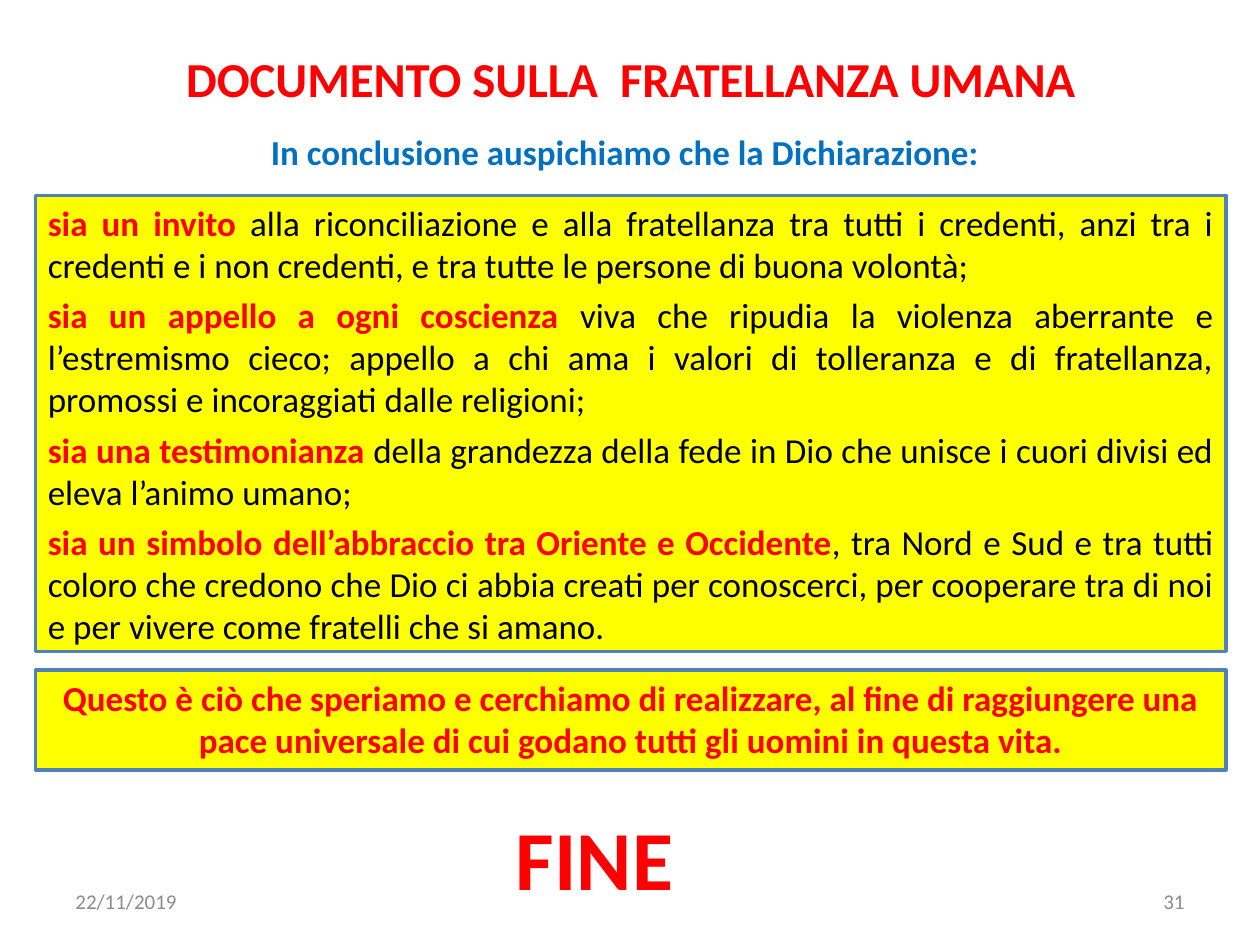
from dataclasses import dataclass
from typing import Optional

from pptx import Presentation
from pptx.dml.color import RGBColor
from pptx.enum.shapes import MSO_SHAPE as Shape
from pptx.enum.text import MSO_ANCHOR as Anchor, PP_ALIGN as Align
from pptx.slide import Slide
from pptx.util import Pt

FONT = "Calibri"
COLORS = {
    "red": "FF0000",
    "blue": "0070C0",
    "black": "000000",
    "grey": "8C8C8C",
    "yellow": "FFFF00",
    "border": "4F81BD",
}


@dataclass(frozen=True)
class Run:
    text: str
    color: str = "red"
    bold: bool = True


@dataclass(frozen=True)
class Block:
    left: float
    top: float
    width: float
    height: float
    size: float
    paragraphs: list[list[Run]]
    align: Align = Align.CENTER
    anchor: Anchor = Anchor.TOP
    fill: Optional[str] = None


WISHES = [
    ("sia un invito ",
     "alla riconciliazione e alla fratellanza tra tutti i credenti, anzi tra i credenti "
     "e i non credenti, e tra tutte le persone di buona volontà;"),
    ("sia un appello a ogni coscienza ",
     "viva che ripudia la violenza aberrante e l’estremismo cieco; appello a chi ama i "
     "valori di tolleranza e di fratellanza, promossi e incoraggiati dalle religioni;"),
    ("sia una testimonianza ",
     "della grandezza della fede in Dio che unisce i cuori divisi ed eleva l’animo umano;"),
    ("sia un simbolo dell’abbraccio tra Oriente e Occidente",
     ", tra Nord e Sud e tra tutti coloro che credono che Dio ci abbia creati per "
     "conoscerci, per cooperare tra di noi e per vivere come fratelli che si amano."),
]
HOPE = ("Questo è ciò che speriamo e cerchiamo di realizzare, al fine di raggiungere una "
        "pace universale di cui godano tutti gli uomini in questa vita.")

BLOCKS = [
    Block(20.2, 22, 680.4, 45, 27.9,
          [[Run("DOCUMENTO SULLA  FRATELLANZA UMANA")]], anchor=Anchor.MIDDLE),
    Block(20.2, 111.6, 680.4, 260.6, 20,
          [[Run(lead), Run(rest, "black", False)] for lead, rest in WISHES],
          align=Align.JUSTIFY, fill="yellow"),
    Block(36, 500.4, 168, 28.8, 12, [[Run("22/11/2019", "grey", False)]],
          align=Align.LEFT, anchor=Anchor.MIDDLE),
    Block(516, 500.4, 168, 28.8, 12, [[Run("31", "grey", False)]],
          align=Align.RIGHT, anchor=Anchor.MIDDLE),
    Block(76.3, 71.3, 561.6, 31.5, 20,
          [[Run("In conclusione auspichiamo che la Dichiarazione:", "blue")]]),
    Block(20.2, 383, 680.4, 56.9, 20, [[Run(HOPE)]], fill="yellow"),
    Block(206.6, 457.2, 266.4, 65.5, 48, [[Run("FINE")]]),
]


def rgb(name: str) -> RGBColor:
    """Return the named colour."""
    return RGBColor.from_string(COLORS[name])


def draw_block(slide: Slide, block: Block) -> None:
    """Draw a text block, framed when it has a fill."""
    bounds = [Pt(value) for value in (block.left, block.top, block.width, block.height)]
    if block.fill:
        shape = slide.shapes.add_shape(Shape.RECTANGLE, *bounds)
        shape.shadow.inherit = False
        shape.fill.solid()
        shape.fill.fore_color.rgb = rgb(block.fill)
        shape.line.color.rgb = rgb("border")
        shape.line.width = Pt(2)
    else:
        shape = slide.shapes.add_textbox(*bounds)
    frame = shape.text_frame
    frame.word_wrap = True
    frame.vertical_anchor = block.anchor
    for index, runs in enumerate(block.paragraphs):
        paragraph = frame.add_paragraph() if index else frame.paragraphs[0]
        paragraph.alignment = block.align
        paragraph.space_before = Pt(4.8 if index else 0)
        for item in runs:
            run = paragraph.add_run()
            run.text = item.text
            run.font.name = FONT
            run.font.size = Pt(block.size)
            run.font.bold = item.bold
            run.font.color.rgb = rgb(item.color)


def main() -> None:
    """Build and save the closing slide."""
    presentation = Presentation()
    presentation.slide_width, presentation.slide_height = Pt(720), Pt(540)
    slide = presentation.slides.add_slide(presentation.slide_layouts[6])
    for block in BLOCKS:
        draw_block(slide, block)
    presentation.save("out.pptx")


if __name__ == "__main__":
    main()
